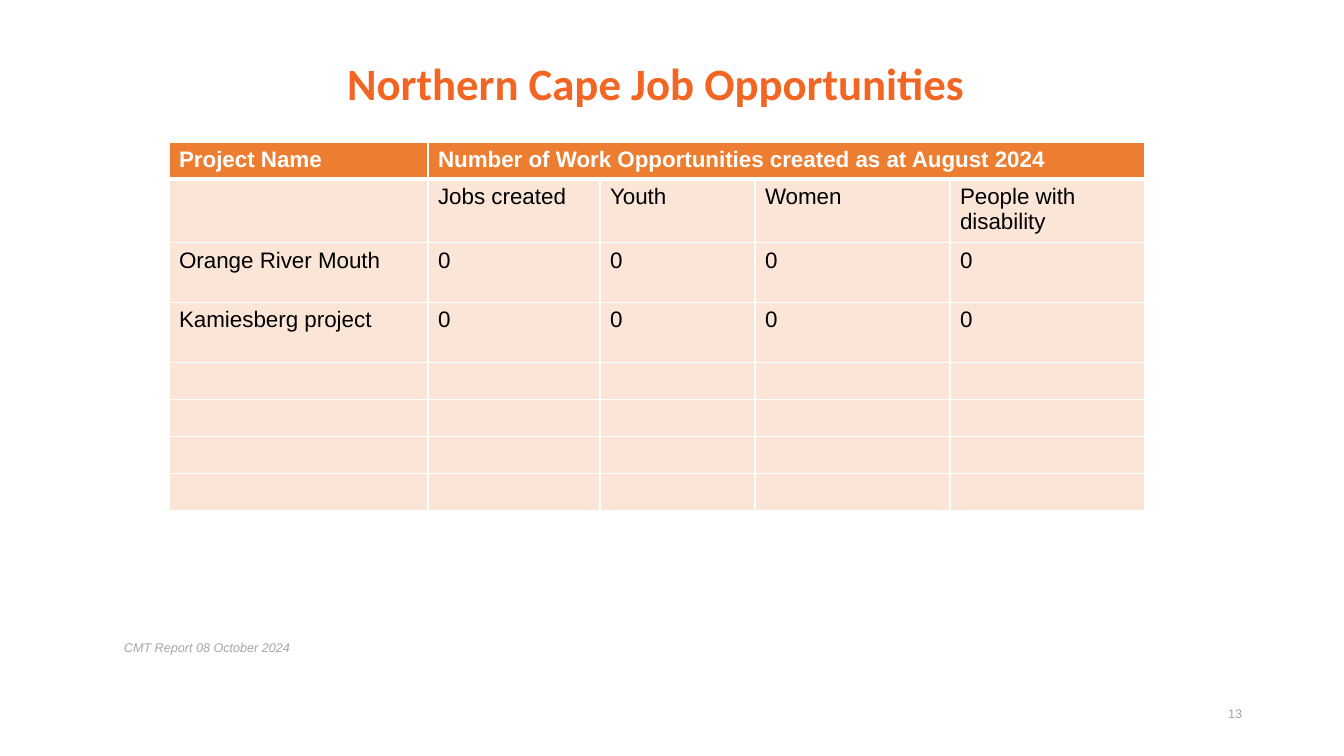
from lxml.etree import SubElement
from pptx import Presentation
from pptx.dml.color import RGBColor
from pptx.enum.text import MSO_ANCHOR as Anchor, PP_ALIGN as Align
from pptx.oxml.ns import qn
from pptx.util import Emu, Pt

EMU_PER_PX = 914400 / 100.8
WHITE = RGBColor(0xFF, 0xFF, 0xFF)
BLACK = RGBColor(0, 0, 0)
GREY = RGBColor(0xA6, 0xA6, 0xA6)
TITLE_ORANGE = RGBColor(0xF2, 0x65, 0x22)
HEADER_ORANGE = RGBColor(0xED, 0x7D, 0x31)
PEACH = RGBColor(0xFB, 0xE5, 0xD6)

CELL_SIZE = 16
COLUMN_WIDTHS = [259, 172, 155, 195, 195]
ROW_HEIGHTS = [35] + [60] * 3 + [35] * 4
ROWS = [
    ["Project Name", "Number of Work Opportunities created as at August 2024"],
    ["", "Jobs created", "Youth", "Women", "People with disability"],
    ["Orange River Mouth"] + ["0"] * 4,
    ["Kamiesberg project"] + ["0"] * 4,
]


def px(value):
    return Emu(round(value * EMU_PER_PX))


def style_font(font, name, size, color, bold=False, italic=False):
    font.name = name
    font.size = Pt(size)
    font.color.rgb = color
    font.bold = bold
    font.italic = italic


def add_text(slide, text, box, name, size, color, align=Align.LEFT,
             anchor=Anchor.TOP, spacing=None, bold=False, italic=False):
    shape = slide.shapes.add_textbox(*map(px, box))
    frame = shape.text_frame
    frame.word_wrap = True
    frame.vertical_anchor = anchor
    paragraph = frame.paragraphs[0]
    paragraph.text = text
    paragraph.alignment = align
    paragraph.line_spacing = spacing
    style_font(paragraph.font, name, size, color, bold, italic)


def add_borders(cell, top, bottom):
    properties = cell._tc.get_or_add_tcPr()
    for side, width in (("L", 1), ("R", 1), ("T", top), ("B", bottom)):
        line = SubElement(properties, qn(f"a:ln{side}"), w=str(Pt(width)))
        fill = SubElement(line, qn("a:solidFill"))
        SubElement(fill, qn("a:srgbClr"), val=str(WHITE))


def fill_cell(cell, text, row):
    header = row == 0
    add_borders(cell, 3 if row == 1 else 1, 3 if header else 1)
    cell.fill.solid()
    cell.fill.fore_color.rgb = HEADER_ORANGE if header else PEACH
    paragraph = cell.text_frame.paragraphs[0]
    if text:
        paragraph.text = text
        style_font(paragraph.font, "Arial", CELL_SIZE,
                   WHITE if header else BLACK, header)
    else:
        SubElement(paragraph._p, qn("a:endParaRPr"), sz=str(CELL_SIZE * 100))


def add_jobs_table(slide, left, top):
    frame = slide.shapes.add_table(
        len(ROW_HEIGHTS), len(COLUMN_WIDTHS), px(left), px(top),
        px(sum(COLUMN_WIDTHS)), px(sum(ROW_HEIGHTS)))
    table = frame.table
    for column, width in zip(table.columns, COLUMN_WIDTHS):
        column.width = px(width)
    for index, height in enumerate(ROW_HEIGHTS):
        table.rows[index].height = px(height)
        texts = ROWS[index] if index < len(ROWS) else []
        for column in range(len(COLUMN_WIDTHS)):
            text = texts[column] if column < len(texts) else ""
            fill_cell(table.cell(index, column), text, index)
    table.cell(0, 1).merge(table.cell(0, len(COLUMN_WIDTHS) - 1))
    table.cell(2, 0).text_frame.paragraphs[0].alignment = Align.JUSTIFY


def main():
    presentation = Presentation()
    presentation.slide_width = px(1344)
    presentation.slide_height = px(756)
    slide = presentation.slides.add_slide(presentation.slide_layouts[6])
    add_text(slide, "13", (1090, 701, 162, 40), "Arial", 9, GREY, Align.RIGHT)
    add_text(slide, "Northern Cape Job Opportunities", (152, 49, 1008, 75),
             "Calibri", 32, TITLE_ORANGE, Align.CENTER, Anchor.MIDDLE, 0.9,
             bold=True)
    add_jobs_table(slide, 169, 142)
    add_text(slide, "CMT Report 08 October 2024", (114, 635, 967, 40),
             "Arial", 9, GREY, italic=True)
    presentation.save("out.pptx")


if __name__ == "__main__":
    main()
